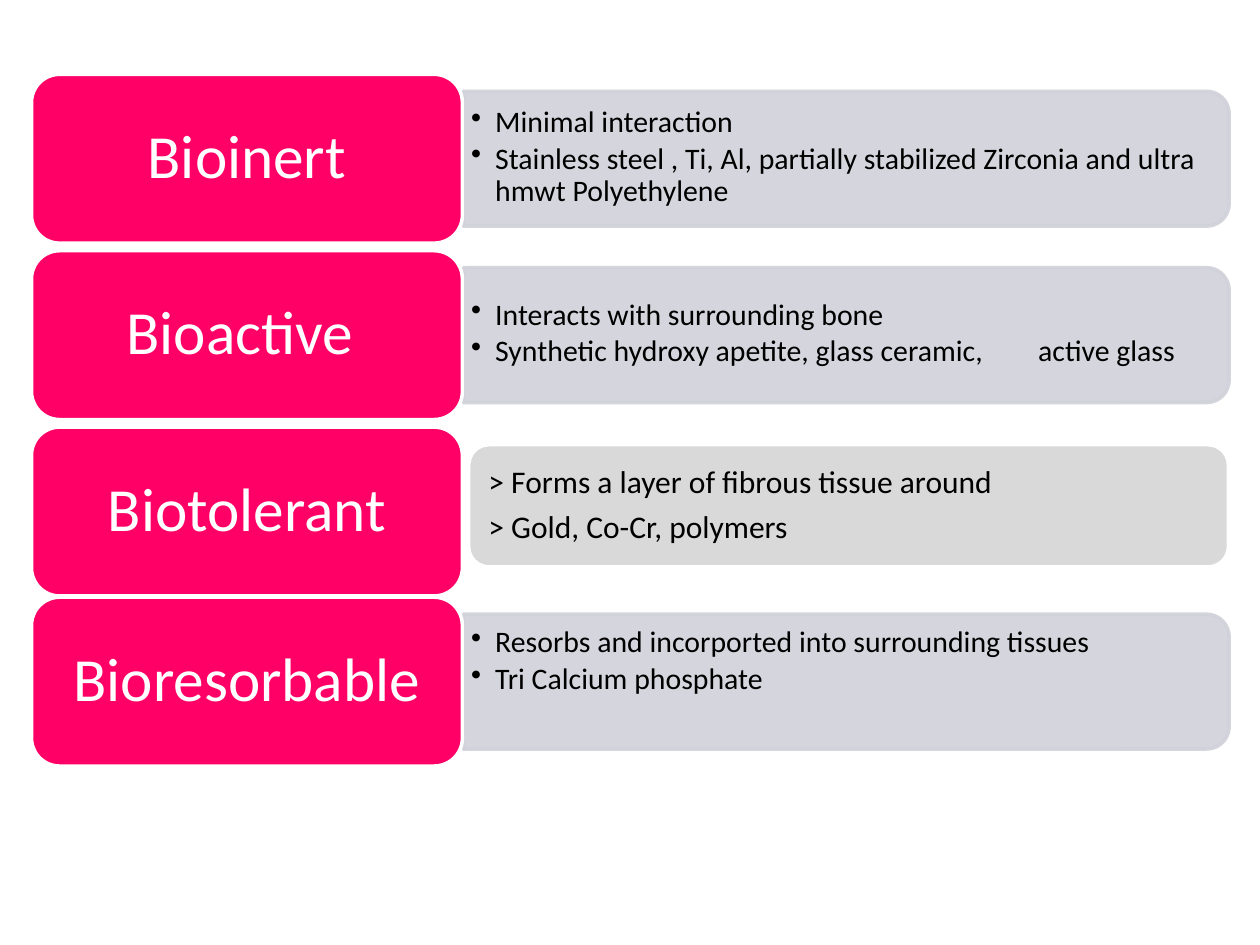
from dataclasses import dataclass

from lxml.etree import SubElement
from pptx import Presentation
from pptx.dml.color import RGBColor
from pptx.enum.shapes import MSO_SHAPE
from pptx.enum.text import MSO_ANCHOR, PP_ALIGN
from pptx.oxml.ns import qn
from pptx.util import Inches, Pt


@dataclass(frozen=True)
class Theme:
    font: str = "Calibri"
    label_fill: str = "FF0066"
    band_fill: str = "D1D1DA"
    card_fill: str = "D9D9D9"
    light: str = "FFFFFF"
    dark: str = "000000"
    label_size: int = 35
    card_size: int = 18
    bullet_size: int = 17


def write_text(shape, lines, *, font, size, color, align=PP_ALIGN.LEFT,
               insets=(0.07, 0.04, 0.07, 0.04), space_after=0, bullet=False):
    frame = shape.text_frame
    frame.word_wrap = True
    frame.vertical_anchor = MSO_ANCHOR.MIDDLE
    (frame.margin_left, frame.margin_top,
     frame.margin_right, frame.margin_bottom) = map(Inches, insets)
    for index, line in enumerate(lines):
        para = frame.add_paragraph() if index else frame.paragraphs[0]
        para.alignment = align
        para.line_spacing = 0.9
        para.space_after = Pt(space_after)
        if bullet:
            para.level = 1
            properties = para._p.get_or_add_pPr()
            properties.set("marL", str(Inches(0.19)))
            properties.set("indent", str(Inches(-0.19)))
            SubElement(properties, qn("a:buChar"), char="•")
        span = para.add_run()
        span.text = line
        span.font.name = font
        span.font.size = Pt(size)
        span.font.color.rgb = RGBColor.from_string(color)


class SlideBuilder:
    def __init__(self, page, theme):
        self.page = page
        self.theme = theme

    def shape(self, kind, left, top, width, height, fill, line):
        shape = self.page.shapes.add_shape(
            kind, Inches(left), Inches(top), Inches(width), Inches(height))
        shape.shadow.inherit = False
        shape.fill.solid()
        shape.fill.fore_color.rgb = RGBColor.from_string(fill)
        shape.line.color.rgb = RGBColor.from_string(line)
        shape.line.width = Pt(2)
        return shape

    def label(self, top, text):
        theme = self.theme
        shape = self.shape(MSO_SHAPE.ROUNDED_RECTANGLE, 0.25, top, 3.42, 1.34,
                           theme.label_fill, theme.light)
        write_text(shape, [text], font=theme.font, size=theme.label_size,
                   color=theme.light, align=PP_ALIGN.CENTER,
                   insets=(0.22, 0.14, 0.22, 0.14))

    def band(self, top, lines, bottom_inset=0.04):
        theme = self.theme
        thickness, length = 1.07, 6.08
        shape = self.shape(MSO_SHAPE.ROUND_2_SAME_RECTANGLE,
                           6.18, top + 0.67 - length / 2, thickness, length,
                           theme.band_fill, theme.band_fill)
        shape.rotation = 90
        for color in shape._element.spPr.iter(qn("a:srgbClr")):
            SubElement(color, qn("a:alpha"), val="90000")
        box = self.page.shapes.add_textbox(
            Inches(3.67), Inches(top + 0.18), Inches(6.03), Inches(0.96))
        write_text(box, lines, font=theme.font, size=theme.bullet_size,
                   color=theme.dark, insets=(0.07, 0.04, 0.07, bottom_inset),
                   space_after=2.5, bullet=True)

    def card(self, top, lines):
        theme = self.theme
        shape = self.shape(MSO_SHAPE.ROUNDED_RECTANGLE, 3.72, top + 0.14, 6.03, 0.97,
                           theme.card_fill, theme.light)
        write_text(shape, lines, font=theme.font, size=theme.card_size,
                   color=theme.dark, insets=(0.11, 0.09, 0.12, 0.09), space_after=6)


def main():
    deck = Presentation()
    deck.slide_width, deck.slide_height = Inches(10), Inches(7.5)
    page = deck.slides.add_slide(deck.slide_layouts[6])
    builder = SlideBuilder(page, Theme())

    builder.band(0.59, [
        "Minimal interaction",
        "Stainless steel , Ti, Al, partially stabilized Zirconia and ultra hmwt Polyethylene",
    ])
    builder.label(0.59, "Bioinert")

    builder.band(1.99, [
        "Interacts with surrounding bone",
        "Synthetic hydroxy apetite, glass ceramic, \tactive glass",
    ])
    builder.label(1.99, "Bioactive ")

    builder.label(3.39, "Biotolerant")
    builder.card(3.39, [
        "> Forms a layer of fibrous tissue around",
        "> Gold, Co-Cr, polymers",
    ])

    builder.band(4.74, [
        "Resorbs and incorported into surrounding tissues",
        "Tri Calcium phosphate",
    ], bottom_inset=0.34)
    builder.label(4.74, "Bioresorbable ")

    deck.save("out.pptx")


if __name__ == "__main__":
    main()
